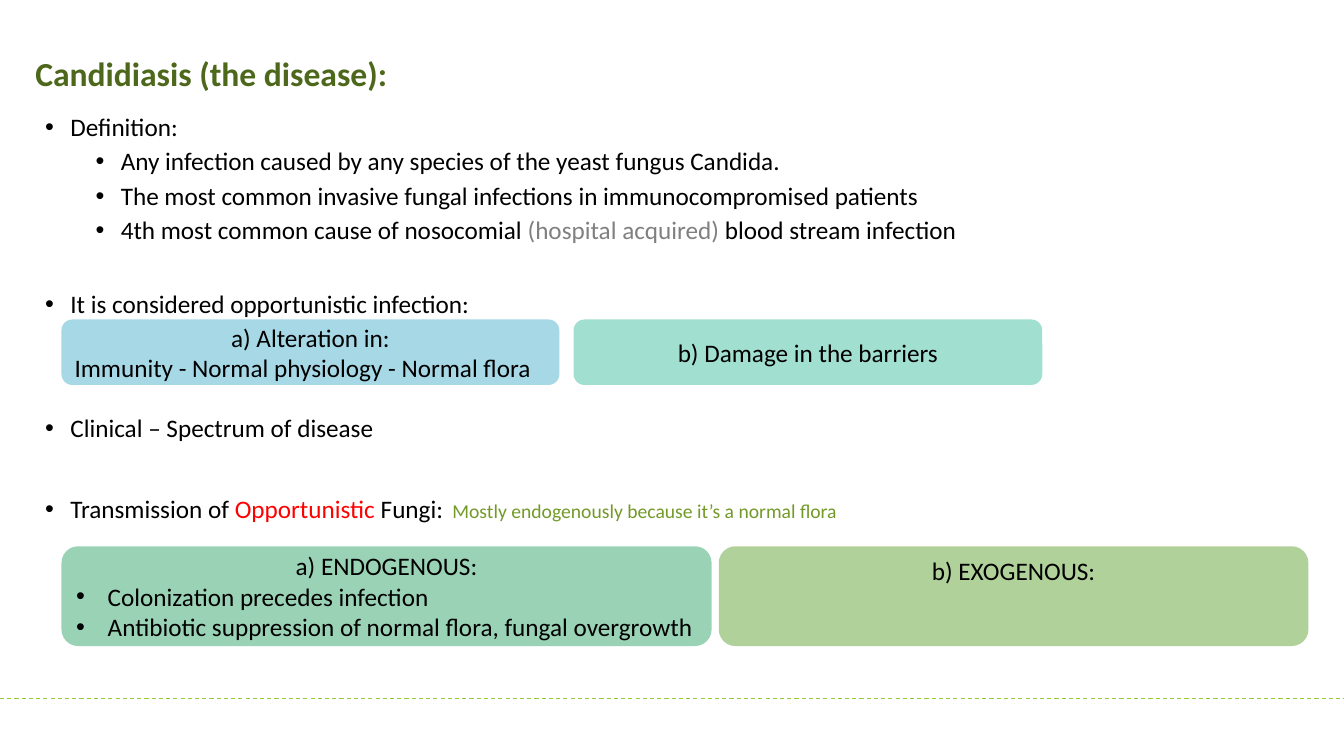
from dataclasses import dataclass

from lxml.etree import SubElement
from pptx import Presentation
from pptx.dml.color import RGBColor
from pptx.enum.dml import MSO_LINE
from pptx.enum.shapes import MSO_CONNECTOR, MSO_SHAPE
from pptx.enum.text import MSO_ANCHOR, MSO_AUTO_SIZE, PP_ALIGN
from pptx.oxml.ns import qn
from pptx.util import Pt

FONT = "Calibri"
BLACK, GREY, RED = "000000", "808080", "FF0000"
TITLE_GREEN, NOTE_GREEN, RULE_GREEN = "4D671B", "739A28", "99CB38"
WIDTH, HEIGHT = 960, 540


@dataclass
class Run:
    text: str
    color: str = BLACK


@dataclass
class Para:
    runs: list[Run]
    before: float = 0
    left: float = 0  # text indent; the bullet hangs to its left
    hang: float = 0
    spacing: float | None = None
    align: PP_ALIGN = PP_ALIGN.LEFT


@dataclass
class Card:
    left: float
    top: float
    width: float
    height: float
    color: str
    paras: list[Para]
    anchor: MSO_ANCHOR = MSO_ANCHOR.MIDDLE


def rgb(color: str) -> RGBColor:
    return RGBColor.from_string(color)


def place(shape, left: float, top: float, width: float, height: float) -> None:
    shape.left, shape.top, shape.width, shape.height = map(Pt, (left, top, width, height))


def style(run, size: float, color: str, bold: bool = False) -> None:
    f = run.font
    f.name, f.size, f.bold = FONT, Pt(size), bold
    f.color.rgb = rgb(color)


def write(tf, paras: list[Para], size: float = 18) -> None:
    for i, para in enumerate(paras):
        p = tf.add_paragraph() if i else tf.paragraphs[0]
        if para.hang:
            pPr = p._p.get_or_add_pPr()
            pPr.set("marL", str(Pt(para.left)))
            pPr.set("indent", str(-Pt(para.hang)))
            SubElement(pPr, qn("a:buFont")).set("typeface", "Arial")
            SubElement(pPr, qn("a:buChar")).set("char", "•")
        p.alignment = para.align
        p.space_before = Pt(para.before)
        if para.spacing:
            p.line_spacing = para.spacing
        for run in para.runs:
            r = p.add_run()
            r.text = run.text
            style(r, size, run.color)


def topic(*runs: Run, before: float = 0) -> Para:
    return Para(list(runs), before, 18, 18, 0.9)


def detail(*runs: Run) -> Para:
    return Para(list(runs), 5, 54, 18, 0.9)


def heading(text: str) -> Para:
    return Para([Run(text)], align=PP_ALIGN.CENTER)


def card_bullet(text: str) -> Para:
    return Para([Run(text)], left=22.5, hang=22.5)


def add_card(s, card: Card) -> None:
    sp = s.shapes.add_shape(MSO_SHAPE.ROUNDED_RECTANGLE, 0, 0, 0, 0)
    place(sp, card.left, card.top, card.width, card.height)
    sp.shadow.inherit = False
    sp.line.fill.background()
    sp.fill.solid()
    sp.fill.fore_color.rgb = rgb(card.color)
    clr = sp.fill._xPr.find(qn("a:solidFill"))[0]
    SubElement(clr, qn("a:alpha")).set("val", "50000")
    tf = sp.text_frame
    tf.word_wrap = True
    tf.vertical_anchor = card.anchor
    tf.margin_top = tf.margin_bottom = Pt(2.7)
    write(tf, card.paras)


BODY = [
    topic(Run("Definition:")),
    detail(Run("Any infection caused by any species of the yeast fungus Candida.")),
    detail(Run("The most common invasive fungal infections in immunocompromised patients")),
    detail(Run("4th most common cause of nosocomial "), Run("(hospital acquired) ", GREY),
           Run("blood stream infection")),
    topic(Run("It is considered opportunistic infection:"), before=33.8),
    topic(Run("Clinical – Spectrum of disease"), before=68.8),
    topic(Run("Transmission of "), Run("Opportunistic", RED), Run(" Fungi:"), before=38.8),
]

CARDS = [
    Card(43.9, 228.2, 355.7, 46.8, "4EB3CF", [
        heading("a) Alteration in:"),
        Para([Run("Immunity - Normal physiology - Normal flora")])]),
    Card(409.7, 228.2, 334.8, 46.8, "44C1A3", [heading("b) Damage in the barriers")]),
    Card(43.9, 390.2, 464.4, 71.3, "37A76F", [
        heading("a) ENDOGENOUS:"),
        card_bullet("Colonization precedes infection"),
        card_bullet("Antibiotic suppression of normal flora, fungal overgrowth")]),
    Card(513.4, 390.2, 421.2, 71.3, "63A537", [heading("b) EXOGENOUS:")], MSO_ANCHOR.TOP),
]


def main() -> None:
    prs = Presentation()
    prs.slide_width, prs.slide_height = Pt(WIDTH), Pt(HEIGHT)
    s = prs.slides.add_slide(prs.slide_layouts[5])

    # Title
    title = s.shapes.title
    place(title, 18, 33.8, 332.6, 40.3)
    tf = title.text_frame
    tf.text = "Candidiasis (the disease):"
    tf.vertical_anchor = MSO_ANCHOR.MIDDLE
    p = tf.paragraphs[0]
    p.alignment, p.line_spacing = PP_ALIGN.LEFT, 0.9
    style(p.runs[0], 24, TITLE_GREEN, bold=True)

    # Bulleted body
    body = s.shapes.add_textbox(0, 0, 0, 0)
    place(body, 25.2, 78.5, 828, 342.7)
    body.text_frame.word_wrap = True
    write(body.text_frame, BODY)

    # Dashed rule at the foot
    rule = s.shapes.add_connector(MSO_CONNECTOR.STRAIGHT, 0, Pt(499), Pt(WIDTH), Pt(499))
    rule.line.color.rgb = rgb(RULE_GREEN)
    rule.line.width = Pt(0.75)
    rule.line.dash_style = MSO_LINE.DASH
    SubElement(rule._element.spPr, qn("a:effectLst"))

    # Cards
    for card in CARDS:
        add_card(s, card)

    # Note beside the transmission topic
    note = s.shapes.add_textbox(0, 0, 0, 0)
    place(note, 316.1, 352.8, 292.3, 24.5)
    note.text_frame.word_wrap = False
    note.text_frame.auto_size = MSO_AUTO_SIZE.SHAPE_TO_FIT_TEXT
    write(note.text_frame,
          [Para([Run("Mostly endogenously because it’s a normal flora", NOTE_GREEN)])], 14)

    prs.save("out.pptx")


if __name__ == "__main__":
    main()
